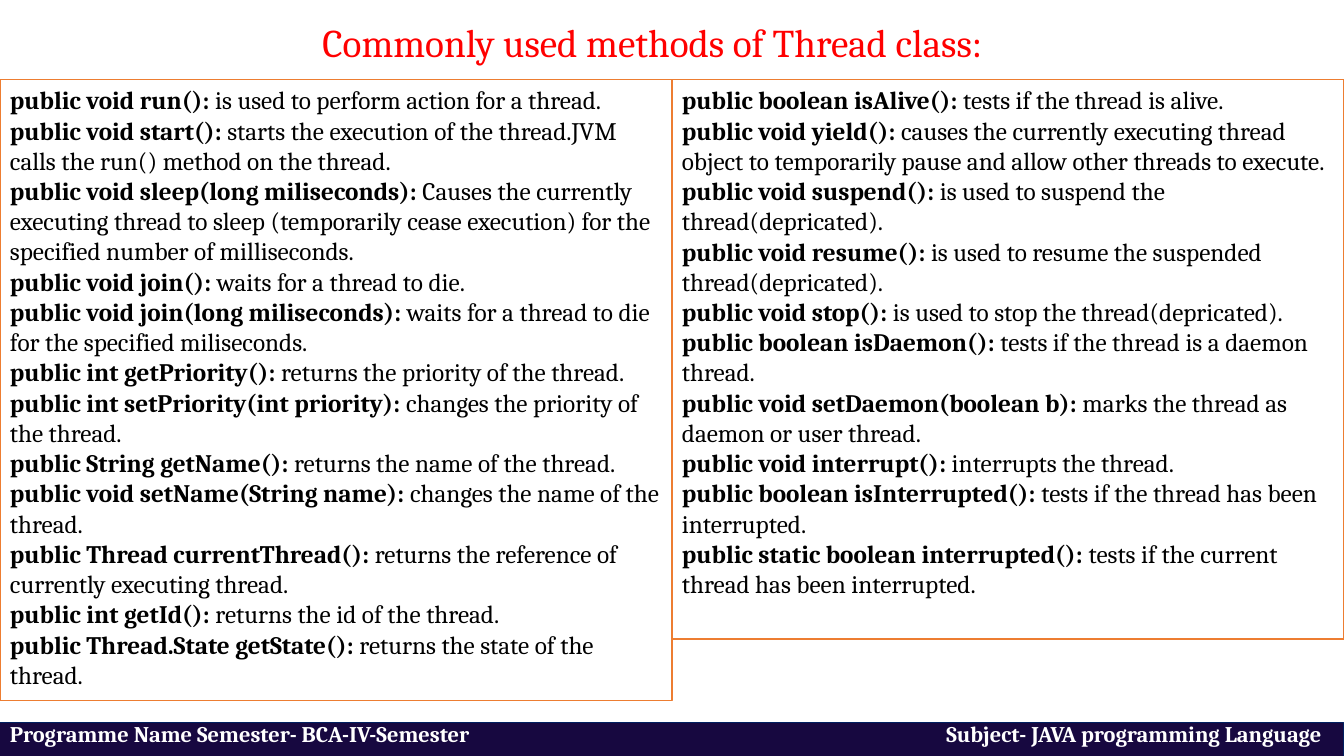
from pptx import Presentation
from pptx.dml.color import RGBColor
from pptx.enum.shapes import MSO_SHAPE
from pptx.enum.text import MSO_ANCHOR, PP_ALIGN
from pptx.oxml.ns import qn
from pptx.util import Inches, Pt
from lxml import etree

RECT = MSO_SHAPE.RECTANGLE
TOP = MSO_ANCHOR.TOP
LEFT = PP_ALIGN.LEFT

TITLE = "Commonly used methods of Thread class:"
FOOTER = ("Programme Name Semester- BCA-IV-Semester", "Subject- JAVA programming Language")
PANELS = [
    (6.16, [
        ("public void run():", "is used to perform action for a thread."),
        ("public void start():", "starts the execution of the thread.JVM calls the run() method on the thread."),
        ("public void sleep(long miliseconds):", "Causes the currently executing thread to sleep "
         "(temporarily cease execution) for the specified number of milliseconds."),
        ("public void join():", "waits for a thread to die."),
        ("public void join(long miliseconds):", "waits for a thread to die for the specified miliseconds."),
        ("public int getPriority():", "returns the priority of the thread."),
        ("public int setPriority(int priority):", "changes the priority of the thread."),
        ("public String getName():", "returns the name of the thread."),
        ("public void setName(String name):", "changes the name of the thread."),
        ("public Thread currentThread():", "returns the reference of currently executing thread."),
        ("public int getId():", "returns the id of the thread."),
        ("public Thread.State getState():", "returns the state of the thread."),
    ]),
    (5.55, [
        ("public boolean isAlive():", "tests if the thread is alive."),
        ("public void yield():", "causes the currently executing thread object to temporarily pause "
         "and allow other threads to execute."),
        ("public void suspend():", "is used to suspend the thread(depricated)."),
        ("public void resume():", "is used to resume the suspended thread(depricated)."),
        ("public void stop():", "is used to stop the thread(depricated)."),
        ("public boolean isDaemon():", "tests if the thread is a daemon thread."),
        ("public void setDaemon(boolean b):", "marks the thread as daemon or user thread."),
        ("public void interrupt():", "interrupts the thread."),
        ("public boolean isInterrupted():", "tests if the thread has been interrupted."),
        ("public static boolean interrupted():", "tests if the current thread has been interrupted."),
    ]),
]

THEME = {
    "font": "Cambria",
    "title": ("FF0000", 28),
    "body": ("000000", 18),
    "foot": ("FFFFFF", 16),
    "paper": "FFFFFF",
    "edge": "ED7D31",
    "bar": "170840",
    "rim": "002060",
}
WIDE, HIGH = 13.33, 7.5
HALF = WIDE / 2


def style(run, role, bold=False):
    tone, size = THEME[role]
    run.font.name = THEME["font"]
    run.font.size = Pt(size)
    run.font.bold = bold
    run.font.color.rgb = RGBColor.from_string(tone)


def add_box(slide, left, top, width, height, fill, line, weight):
    box = slide.shapes.add_shape(RECT, Inches(left), Inches(top), Inches(width), Inches(height))
    box.shadow.inherit = False
    box.fill.solid()
    box.fill.fore_color.rgb = RGBColor.from_string(THEME[fill])
    box.line.color.rgb = RGBColor.from_string(THEME[line])
    box.line.width = Pt(weight)
    frame = box.text_frame
    frame.word_wrap = True
    frame.vertical_anchor = TOP
    return frame


def add_panel(slide, left, height, methods):
    frame = add_box(slide, left, 0.79, HALF, height, "paper", "edge", 1)
    frame.text = "\n".join(name for name, _ in methods)
    for para, (_, use) in zip(frame.paragraphs, methods):
        para.alignment = LEFT
        style(para.runs[0], "body", True)
        run = para.add_run()
        run.text = " " + use
        style(run, "body")


def add_footer(slide):
    frame = add_box(slide, 0, 7.17, WIDE, 0.34, "bar", "rim", 0.75)
    para = frame.paragraphs[0]
    para.alignment = LEFT
    para.line_spacing = 0.7
    tabs = etree.SubElement(para._p.get_or_add_pPr(), qn("a:tabLst"))
    etree.SubElement(tabs, qn("a:tab"), pos=str(Inches(13.01)), algn="r")
    para.text = "\t".join(FOOTER)
    for run in para.runs:
        style(run, "foot", True)


def add_title(slide):
    box = slide.shapes.add_textbox(Inches(3.1), Inches(0.13), Inches(7.14), Inches(0.57))
    frame = box.text_frame
    frame.word_wrap = True
    frame.text = TITLE
    style(frame.paragraphs[0].runs[0], "title")


def main():
    deck = Presentation()
    deck.slide_width, deck.slide_height = Inches(WIDE), Inches(HIGH)
    slide = deck.slides.add_slide(deck.slide_layouts[6])
    add_footer(slide)
    for col, (height, methods) in enumerate(PANELS):
        add_panel(slide, col * HALF, height, methods)
    add_title(slide)
    deck.save("out.pptx")


if __name__ == "__main__":
    main()
